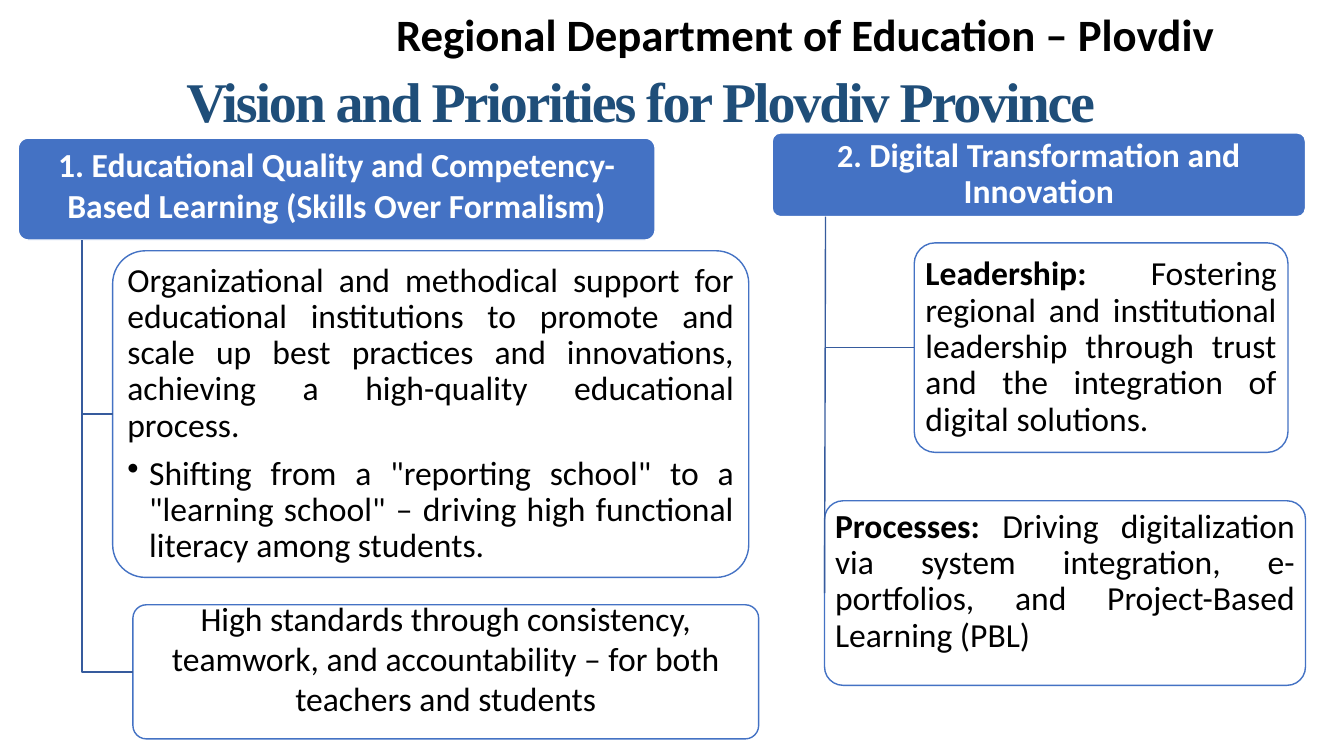
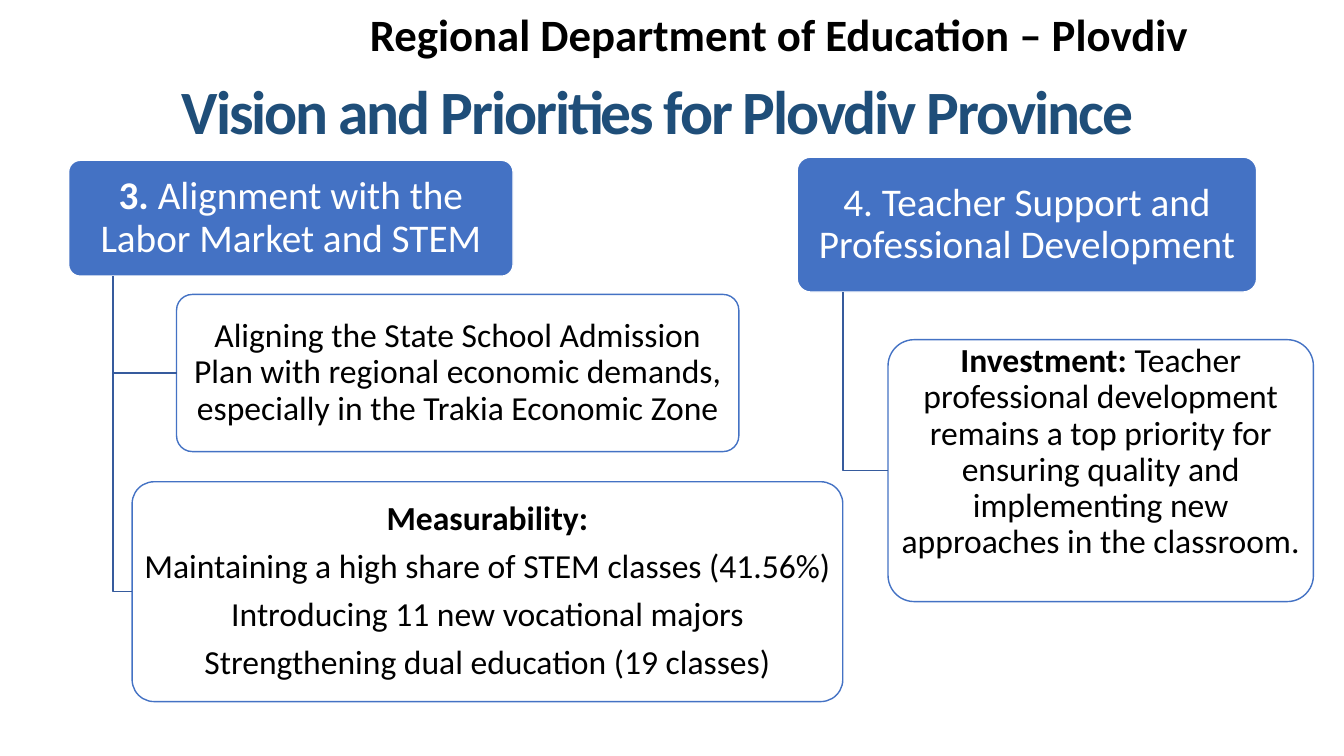
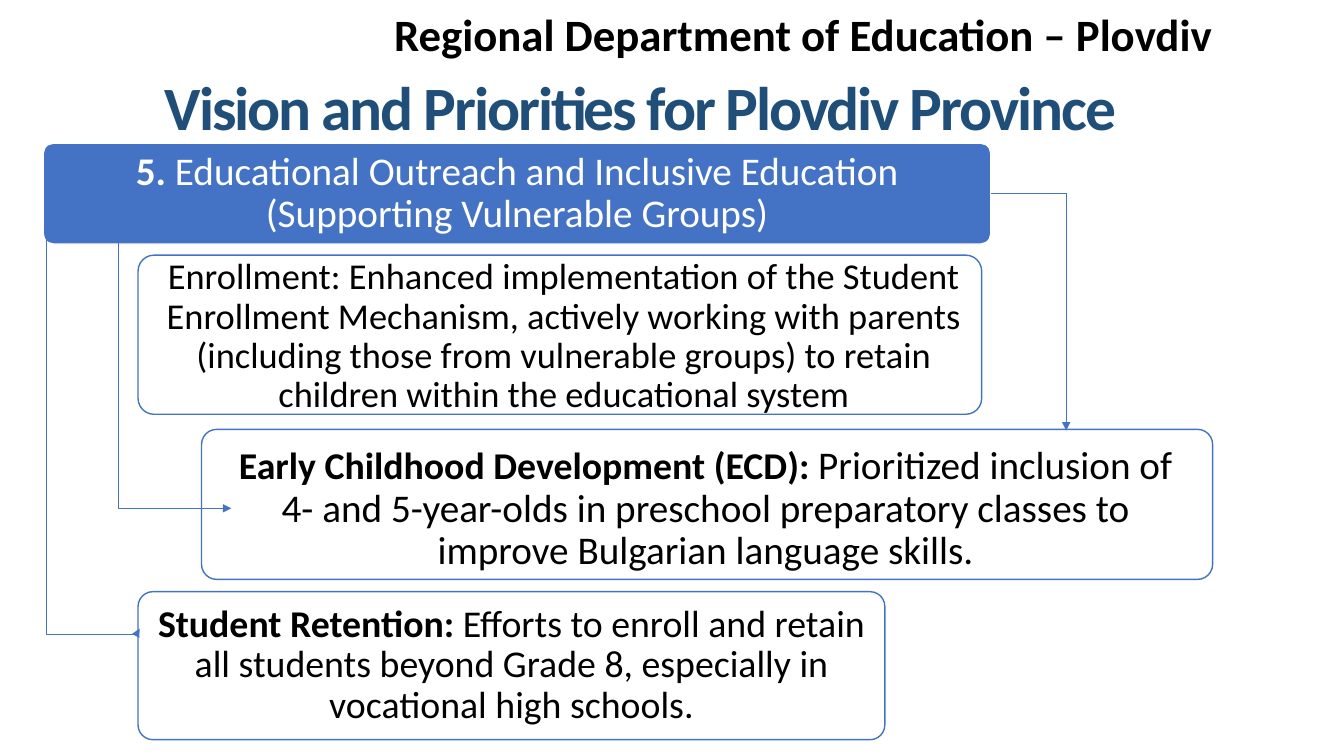
from lxml.etree import SubElement
from pptx import Presentation
from pptx.dml.color import RGBColor
from pptx.enum.shapes import MSO_CONNECTOR as LINK, MSO_SHAPE as SHAPE
from pptx.enum.text import MSO_ANCHOR as ANCHOR, MSO_AUTO_SIZE as FIT, PP_ALIGN as ALIGN
from pptx.oxml.ns import qn
from pptx.util import Cm, Pt

COLORS = {
    "heading": "4472C4",
    "branch": "365B9D",
    "vision": "1F4E79",
    "white": "FFFFFF",
    "black": "000000",
}
RGB = {name: RGBColor.from_string(value) for name, value in COLORS.items()}

FRAME = {
    "word_wrap": True,
    "auto_size": FIT.NONE,
    "vertical_anchor": ANCHOR.MIDDLE,
    "margin_left": Cm(0.13),
    "margin_right": Cm(0.13),
    "margin_top": Cm(0.08),
    "margin_bottom": Cm(0.08),
}
DEPARTMENT_FRAME = {
    **FRAME,
    "vertical_anchor": ANCHOR.TOP,
    **{f"margin_{side}": Cm(0.33) for side in ("left", "right", "top", "bottom")},
}
VISION_FRAME = {
    **FRAME,
    "vertical_anchor": ANCHOR.BOTTOM,
    **{f"margin_{side}": Cm(0.64) for side in ("left", "right", "top")},
    "margin_bottom": 0,
}
TOP = {"vertical_anchor": ANCHOR.TOP}
JUSTIFIED = {"alignment": ALIGN.JUSTIFY}
SINGLE = {"line_spacing": 1.0, "space_after": Pt(0)}


def apply(target, values):
    for name, value in values.items():
        setattr(target, name, value)


def write(frame, paragraphs, color, frame_format, paragraph_format, font="Calibri"):
    apply(frame, frame_format)
    for index, runs in enumerate(paragraphs):
        paragraph = frame.paragraphs[0] if index == 0 else frame.add_paragraph()
        largest = max(size for _, size, _ in runs)
        apply(paragraph, {
            "alignment": ALIGN.CENTER,
            "line_spacing": 0.9,
            "space_before": Pt(0),
            "space_after": Pt(round(largest * 0.35, 1)),
            **paragraph_format,
        })
        for text, size, bold in runs:
            run = paragraph.add_run()
            run.text = text
            apply(run.font, {"name": font, "size": Pt(size), "bold": bold})
            run.font.color.rgb = RGB[color]


SLIDES = [
    {
        "department_left": 9.65,
        "vision": (1.4, 1.85, 29.49, 1.52),
        "vision_font": ("Times New Roman", 40),
        "priorities": [
            {
                "heading": ((0.46, 3.48, 16.05, 2.57), [[("1. Educational Quality and Competency-Based Learning (Skills Over Formalism)", 24, True)]], TOP, SINGLE),
                "actions": [
                    ((2.84, 6.32, 16.03, 8.23), [
                        [("Organizational and methodical support for educational institutions to promote and scale up best practices and innovations, achieving a high-quality educational process.", 24, False)],
                        [("Shifting from a \"reporting school\" to a \"learning school\" – driving high functional literacy among students.", 24, False)],
                    ], {}, JUSTIFIED),
                    ((3.35, 15.24, 15.77, 3.38), [[("High standards through consistency, teamwork, and accountability – for both teachers and students", 24, False)]], {"margin_bottom": Cm(0.78)}, SINGLE),
                ],
            },
            {
                "heading": ((19.46, 3.35, 13.44, 2.11), [[("2. ", 23, True), ("Digital Transformation and Innovation", 24, True)]], {}, {}),
                "actions": [
                    ((23.04, 6.12, 9.42, 5.28), [[("Leadership: ", 24, True), ("Fostering regional and institutional leadership through trust and the integration of digital solutions.", 24, False)]], {}, JUSTIFIED),
                    ((20.78, 12.62, 12.12, 4.65), [[("Processes: ", 24, True), ("Driving digitalization via system integration, e-portfolios, and Project-Based Learning (PBL)", 24, False)]], TOP, JUSTIFIED),
                ],
            },
        ],
    },
    {
        "department_left": 8.99,
        "vision": (1.83, 1.9, 29.49, 1.78),
        "vision_font": ("Calibri", 44),
        "priorities": [
            {
                "heading": ((1.73, 4.04, 11.2, 2.92), [[("3. ", 28, True), ("Alignment with the Labor Market and STEM", 28, False)]], {}, {}),
                "actions": [
                    ((4.45, 7.42, 14.17, 3.96), [[("Aligning the State School Admission Plan with regional economic demands, especially in the Trakia Economic Zone", 24, False)]], {}, {}),
                    ((3.33, 12.14, 17.91, 5.54), [
                        [("Measurability:", 24, True)],
                        [("Maintaining a high share of STEM classes (41.56%)", 24, False)],
                        [("Introducing 11 new vocational majors", 24, False)],
                        [("Strengthening dual education (19 classes)", 24, False)],
                    ], {}, {}),
                ],
            },
            {
                "heading": ((20.09, 3.96, 11.58, 3.4), [[("4. Teacher Support and Professional Development", 28, False)]], {}, {}),
                "actions": [
                    ((22.38, 8.56, 10.72, 6.6), [[("Investment: ", 24, True), ("Teacher professional development remains a top priority for ensuring quality and implementing new approaches in the classroom.", 24, False)]], {"margin_bottom": Cm(1)}, {}),
                ],
            },
        ],
    },
    {
        "department_left": 9.6,
        "vision": (1.4, 2.06, 29.49, 1.52),
        "vision_font": ("Calibri", 44),
        "priorities": [
            {
                "heading": ((1.09, 3.61, 23.88, 2.54), [[("5. ", 28, True), ("Educational Outreach and Inclusive Education (Supporting Vulnerable Groups)", 28, False)]], {}, {}),
                "actions": [
                    ((3.48, 6.43, 21.26, 4.01), [[("Enrollment: Enhanced implementation of the Student Enrollment Mechanism, actively working with parents (including those from vulnerable groups) to retain children within the educational system", 26, False)]], {"margin_left": Cm(0.35), "margin_top": Cm(0.2)}, {}),
                    ((5.08, 10.82, 25.48, 3.78), [[("Early Childhood Development (ECD): ", 27, True), ("Prioritized inclusion of 4- and 5-year-olds in preschool preparatory classes to improve Bulgarian language skills.", 28, False)]], {"margin_left": Cm(0.8), "margin_right": Cm(0.88), "margin_top": Cm(0.33)}, {}),
                    ((3.48, 14.91, 18.82, 3.73), [[("Student Retention: ", 27, True), ("Efforts to enroll and retain all students beyond Grade 8, especially in vocational high schools.", 27, False)]], {}, {}),
                ],
                "arrows": [
                    ((24.97, 4.88, 1.9, 5.97), "bentConnector2", {}, None),
                    ((-2.54, 9.78, 9.78, 2.34), "bentConnector3", {"rot": "16200000", "flipH": "1"}, 101400),
                    ((0.79, 7.77, 7.24, 2.84), "bentConnector2", {"rot": "16200000", "flipH": "1"}, None),
                ],
            },
        ],
    },
]

deck = Presentation()
deck.slide_width, deck.slide_height = Cm(33.87), Cm(19.05)

for content in SLIDES:
    slide = deck.slides.add_slide(deck.slide_layouts[5])
    shapes = slide.shapes

    department = shapes.title
    department_left = Cm(content["department_left"])
    apply(department, {
        "left": department_left,
        "top": 0,
        "width": deck.slide_width - department_left,
        "height": Cm(2.13),
    })
    write(department.text_frame, [[("Regional Department of Education – Plovdiv", 32, True)]], "black",
          DEPARTMENT_FRAME, {"alignment": ALIGN.LEFT, "space_after": Pt(0)})

    vision = shapes.add_textbox(*map(Cm, content["vision"]))
    vision_font, vision_size = content["vision_font"]
    write(vision.text_frame, [[("Vision and Priorities for Plovdiv Province", vision_size, True)]], "vision",
          VISION_FRAME, {"line_spacing": 0.8, "space_after": Pt(0)}, vision_font)
    vision.text_frame.paragraphs[0].runs[0].font._element.set("spc", "-150")

    for priority in content["priorities"]:
        panels = []
        for bounds, paragraphs, frame_format, paragraph_format in [priority["heading"], *priority["actions"]]:
            fill, line, ink = ("white", "heading", "black") if panels else ("heading", "white", "white")
            panel = shapes.add_shape(SHAPE.ROUNDED_RECTANGLE, *map(Cm, bounds))
            panel.adjustments[0] = 0.1
            panel.shadow.inherit = False
            panel.fill.solid()
            panel.fill.fore_color.rgb = RGB[fill]
            panel.line.color.rgb = RGB[line]
            panel.line.width = Pt(1)
            write(panel.text_frame, paragraphs, ink, {**FRAME, **frame_format}, paragraph_format)
            for paragraph in panel.text_frame.paragraphs:
                if paragraph.text.startswith("Shifting"):
                    properties = paragraph._p.get_or_add_pPr()
                    properties.set("marL", str(Cm(0.55)))
                    properties.set("indent", str(-Cm(0.55)))
                    SubElement(properties, qn("a:buChar")).set("char", "•")
            panels.append(panel)

        heading, *actions = panels
        trunk = heading.left + heading.width // 10
        base = heading.top + heading.height
        for action in actions if "arrows" not in priority else []:
            middle = action.top + action.height // 2
            if action.left - trunk > Cm(0.1):
                outline = shapes.build_freeform(trunk, base)
                outline.add_line_segments([(trunk, middle), (action.left, middle)], close=False)
                branch = outline.convert_to_shape()
                branch.fill.background()
                branch.shadow.inherit = False
            else:
                branch = shapes.add_connector(LINK.STRAIGHT, trunk, base, action.left, middle)
                branch.end_connect(action, 1)
                SubElement(branch._element.spPr, qn("a:effectLst"))
            branch.line.color.rgb = RGB["branch"]
            branch.line.width = Pt(1)

        for (left, top, width, height), bend, turn, reach in priority.get("arrows", []):
            arrow = shapes.add_connector(LINK.ELBOW, Cm(left), Cm(top), Cm(left + width), Cm(top + height))
            arrow.line.color.rgb = RGB["heading"]
            arrow.line.width = Pt(0.5)
            properties = arrow._element.spPr
            for name, value in turn.items():
                properties.find(qn("a:xfrm")).set(name, value)
            geometry = properties.find(qn("a:prstGeom"))
            geometry.set("prst", bend)
            if reach:
                guide = SubElement(geometry.find(qn("a:avLst")), qn("a:gd"))
                guide.set("name", "adj1")
                guide.set("fmla", f"val {reach}")
            SubElement(properties.find(qn("a:ln")), qn("a:tailEnd")).set("type", "triangle")
            SubElement(properties, qn("a:effectLst"))

deck.save("out.pptx")
